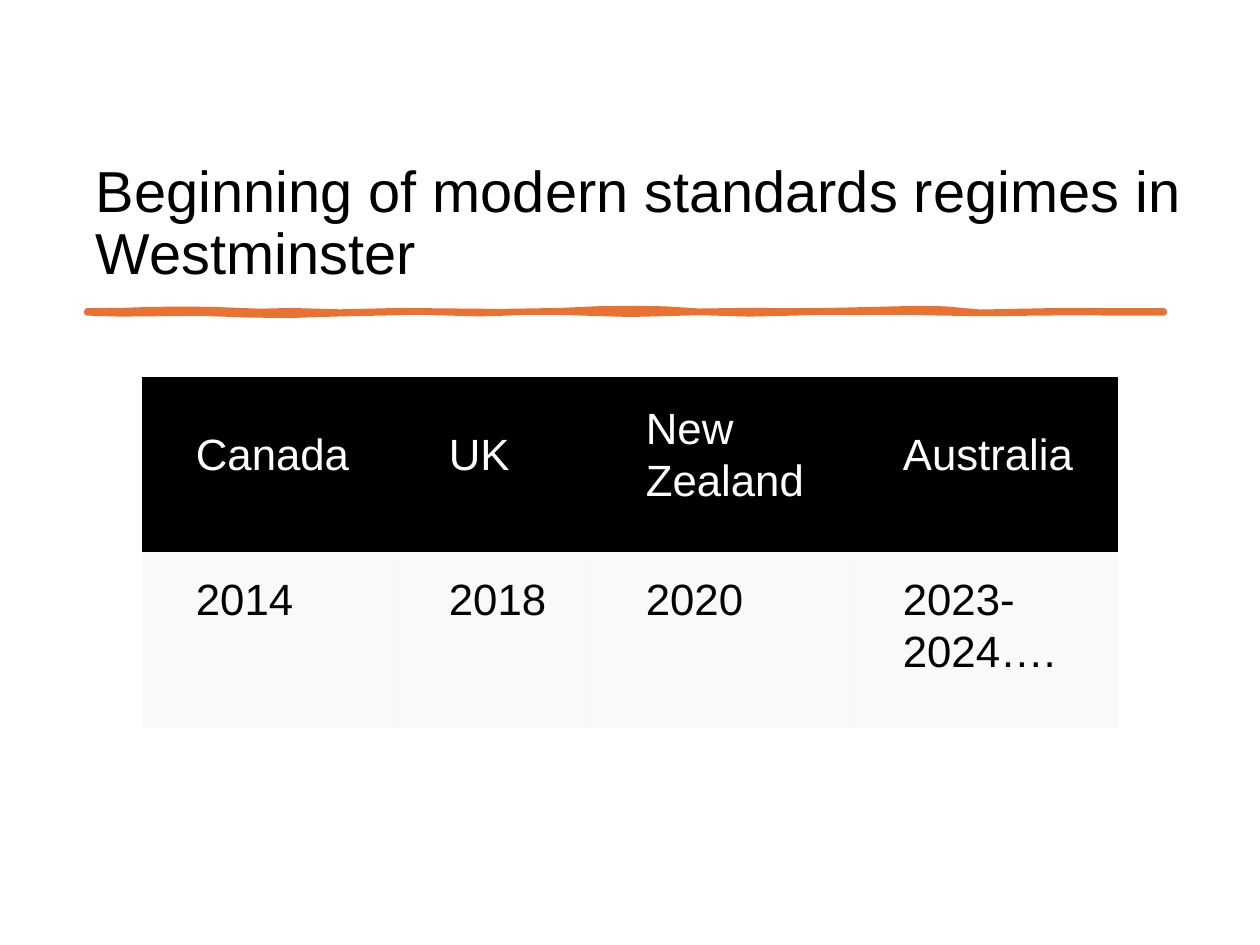
from lxml import etree
from pptx import Presentation
from pptx.dml.color import RGBColor
from pptx.enum.text import MSO_ANCHOR, PP_ALIGN
from pptx.oxml.ns import qn
from pptx.util import Emu, Pt

LEFT = PP_ALIGN.LEFT
TOP, MIDDLE = MSO_ANCHOR.TOP, MSO_ANCHOR.MIDDLE
PX = 914400 // 126
FONT = "Arial"
NO_STYLE = "{2D5ABB26-0587-4C30-8999-92F81FD0307C}"
COLORS = {"text": "000000", "header": "000000", "header_text": "FFFFFF",
          "body": "F2F2F2", "rule": "E97132"}

# Content
TITLE = "Beginning of modern standards regimes in Westminster"
ROWS = [["Canada", "UK", "New Zealand", "Australia"],
        ["2014", "2018", "2020", "2023-2024…."]]

# Places in px
TITLE_BOX = (87, 156, 1173, 137)
TABLE_LEFT, TABLE_TOP, ROW_H = 142, 377, 175.5
COL_W = [253, 197, 257, 269]
CELL_INSETS = (54, 20, 32, 42)
TITLE_INSETS = (9, 5, 9, 5)

# Hand-drawn rule: upper and lower edge in tenths of a px
RULE_TOP = [(870, 3110), (1200, 3108), (1500, 3098), (1800, 3094),
            (2150, 3098), (2600, 3116), (2900, 3108), (3400, 3122),
            (4000, 3108), (5000, 3118), (5600, 3108), (6000, 3090),
            (6350, 3086), (6650, 3092), (7000, 3114), (7400, 3108),
            (8200, 3110), (8800, 3096), (9200, 3086), (9450, 3092),
            (9800, 3124), (10500, 3110), (11640, 3110)]
RULE_BOTTOM = [(870, 3128), (1200, 3138), (2000, 3130), (2500, 3148),
               (2900, 3152), (3400, 3136), (4200, 3120), (4800, 3136),
               (5200, 3124), (5700, 3124), (6300, 3142), (7000, 3124),
               (7500, 3138), (8100, 3124), (9200, 3124), (9800, 3134),
               (10600, 3126), (11640, 3128)]


def px(n):
    return Emu(round(n * PX))


def rgb(name):
    return RGBColor.from_string(COLORS[name])


def set_text(tf, text, size=25, color="text", spacing=1.07, after=0):
    p = tf.paragraphs[0]
    p.alignment, p.line_spacing = LEFT, spacing
    p.space_before, p.space_after = Pt(0), Pt(after)
    r = p.add_run()
    r.text = text
    r.font.name, r.font.size = FONT, Pt(size)
    r.font.color.rgb = rgb(color)


def set_insets(box, insets):
    (box.margin_left, box.margin_top,
     box.margin_right, box.margin_bottom) = map(px, insets)


prs = Presentation()
prs.slide_width, prs.slide_height = px(1260), px(945)
s = prs.slides.add_slide(prs.slide_layouts[5])

# Title
title = s.shapes.title
title.left, title.top, title.width, title.height = map(px, TITLE_BOX)
tf = title.text_frame
tf.word_wrap = True
tf.vertical_anchor = MIDDLE
set_insets(tf, TITLE_INSETS)
set_text(tf, TITLE, size=33, spacing=0.9)

# Orange rule
outline = RULE_TOP + RULE_BOTTOM[::-1]
fb = s.shapes.build_freeform(*outline[0], scale=PX / 10)
fb.add_line_segments(outline[1:], close=True)
rule = fb.convert_to_shape()
rule.shadow.inherit = False
rule.fill.solid()
rule.fill.fore_color.rgb = rgb("rule")
rule.line.color.rgb = rgb("rule")
rule.line.width = Pt(3.25)
etree.SubElement(rule.line._get_or_add_ln(), qn("a:round"))

# Table
frame = s.shapes.add_table(len(ROWS), len(COL_W), px(TABLE_LEFT), px(TABLE_TOP),
                           px(sum(COL_W)), px(ROW_H * len(ROWS)))
table = frame.table
table._tbl.tblPr.find(qn("a:tableStyleId")).text = NO_STYLE
table.horz_banding = False
for col, w in zip(table.columns, COL_W):
    col.width = px(w)
for i, texts in enumerate(ROWS):
    table.rows[i].height = px(ROW_H)
    head = i == 0
    for j, text in enumerate(texts):
        cell = table.cell(i, j)
        set_insets(cell, CELL_INSETS)
        cell.vertical_anchor = MIDDLE if head else TOP
        cell.fill.solid()
        cell.fill.fore_color.rgb = rgb("header" if head else "body")
        if not head:
            clr = cell._tc.tcPr.find(".//" + qn("a:srgbClr"))
            etree.SubElement(clr, qn("a:alpha"), val="45000")
        set_text(cell.text_frame, text, after=8,
                 color="header_text" if head else "text")

prs.save("out.pptx")
